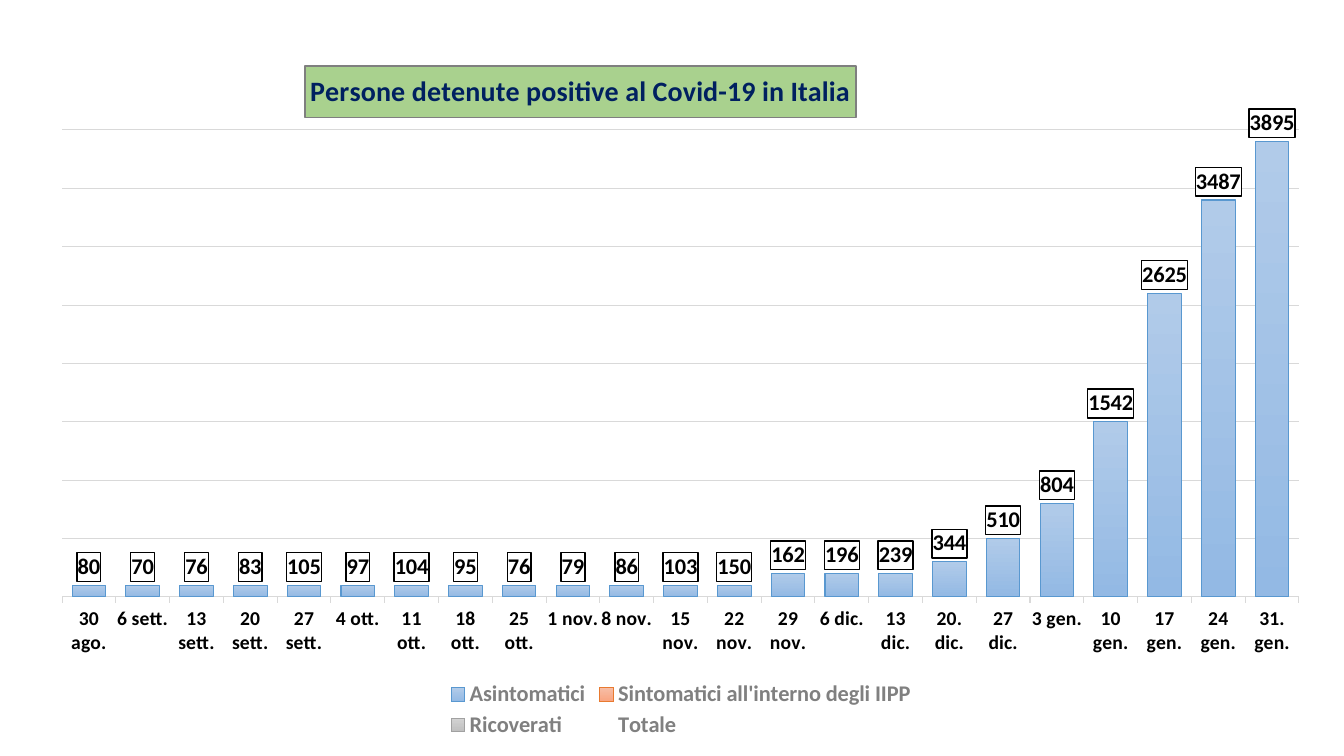
from pptx import Presentation
from pptx.chart.data import CategoryChartData
from pptx.dml.color import RGBColor
from pptx.enum.chart import XL_CHART_TYPE, XL_LABEL_POSITION, XL_LEGEND_POSITION, XL_TICK_LABEL_POSITION, XL_TICK_MARK
from pptx.oxml import parse_xml
from pptx.oxml.ns import nsdecls
from pptx.util import Emu, Pt

SCALE = 914400 / 100.8
COLOURS = {
    "text": "000000", "title": "002060", "title_fill": "A9D18E", "title_line": "7F7F7F",
    "grid": "D9D9D9", "legend": "808080", "label_fill": "FFFFFF",
}
SERIES_COLOURS = {
    "Asintomatici": ("B1CBE9", "93B9E4", "5998D0"),
    "Sintomatici all'interno degli IIPP": ("F7BDA5", "F8A582", "E87A30"),
    "Ricoverati": ("D2D2D2", "C0C0C0", "A1A1A1"),
}
WEEKS = [
    "30 ago.", "6 sett.", "13 sett.", "20 sett.", "27 sett.", "4 ott.", "11 ott.", "18 ott.",
    "25 ott.", "1 nov.", "8 nov.", "15 nov.", "22 nov.", "29 nov.", "6 dic.", "13 dic.",
    "20. dic.", "27 dic.", "3 gen.", "10 gen.", "17 gen.", "24 gen.", "31. gen.",
]
TOTALS = [
    80, 70, 76, 83, 105, 97, 104, 95, 76, 79, 86, 103, 150, 162, 196, 239, 344, 510, 804,
    1542, 2625, 3487, 3895,
]
ASYMPTOMATIC = [100] * 13 + [200] * 3 + [300, 500, 800, 1500, 2600, 3400, 3900]
SYMPTOMATIC = [0] * len(WEEKS)
HOSPITALISED = [0] * len(WEEKS)


def px(length):
    return Emu(round(length * SCALE))


def colour(name):
    return RGBColor.from_string(COLOURS.get(name, name))


def set_format(target, values):
    for name, value in values.items():
        setattr(target, name, value)


def style_font(font, size, name):
    set_format(font, {"name": "Calibri", "size": Pt(size), "bold": True})
    font.color.rgb = colour(name)


def style_line(line, name, width=0.75):
    line.color.rgb = colour(name)
    line.width = Pt(width)


def place_part(part, index, box, area):
    for layout in part.xpath("./c:layout"):
        part.remove(layout)
    fractions = {
        "x": (area[0] - box[0]) / box[2], "y": (area[1] - box[1]) / box[3],
    }
    if len(area) == 4:
        fractions.update(w=area[2] / box[2], h=area[3] / box[3])
    inner = '<c:layoutTarget val="inner"/>' if index == 0 else ""
    modes = '<c:xMode val="edge"/><c:yMode val="edge"/>'
    places = "".join(f'<c:{key} val="{value:.4f}"/>' for key, value in fractions.items())
    part.insert(index, parse_xml(
        f'<c:layout {nsdecls("c")}><c:manualLayout>{inner}{modes}{places}'
        '</c:manualLayout></c:layout>'))


def add_title(chart, box):
    chart.has_title = True
    title = chart.chart_title
    title.include_in_layout = False
    para = title.text_frame.paragraphs[0]
    span = para.add_run()
    span.text = "Persone detenute positive al Covid-19 in Italia"
    style_font(span.font, 20, "title")
    title.format.fill.solid()
    title.format.fill.fore_color.rgb = colour("title_fill")
    style_line(title.format.line, "title_line", 1)
    place_part(chart.element.xpath("./c:chart/c:title")[0], 1, box, (305, 66))


def add_legend(chart, box):
    chart.has_legend = True
    legend = chart.legend
    set_format(legend, {"position": XL_LEGEND_POSITION.BOTTOM, "include_in_layout": False})
    style_font(legend.font, 16, "legend")
    place_part(chart.element.xpath("./c:chart/c:legend")[0], 1, box, (444, 678, 474, 64))


def style_axes(chart):
    weeks = chart.category_axis
    set_format(weeks, {"major_tick_mark": XL_TICK_MARK.OUTSIDE,
                       "tick_label_position": XL_TICK_LABEL_POSITION.LOW})
    style_font(weeks.tick_labels.font, 14, "text")
    style_line(weeks.format.line, "grid")
    people = chart.value_axis
    set_format(people, {"minimum_scale": 0, "maximum_scale": 4000, "major_unit": 500,
                        "has_major_gridlines": True, "visible": False})
    style_line(people.major_gridlines.format.line, "grid")


def style_bars(series, start, end, outline):
    fill = series.format.fill
    fill.gradient()
    fill.gradient_angle = 270
    for stop, shade in zip(fill.gradient_stops, (start, end)):
        stop.color.rgb = colour(shade)
    style_line(series.format.line, outline)


def label_totals(series):
    series.format.fill.background()
    series.format.line.fill.background()
    labels = series.data_labels
    set_format(labels, {"show_value": True, "position": XL_LABEL_POSITION.INSIDE_BASE})
    style_font(labels.font, 16, "text")
    frame = parse_xml(
        f'<c:spPr {nsdecls("c", "a")}><a:solidFill><a:srgbClr val="{COLOURS["label_fill"]}"/>'
        f'</a:solidFill><a:ln w="12700"><a:solidFill><a:srgbClr val="{COLOURS["text"]}"/>'
        '</a:solidFill></a:ln></c:spPr>')
    series._element.xpath("./c:dLbls/c:txPr")[0].addprevious(frame)


def add_cases_chart(page, box):
    data = CategoryChartData()
    data.categories = WEEKS
    for name, values in zip(SERIES_COLOURS, (ASYMPTOMATIC, SYMPTOMATIC, HOSPITALISED)):
        data.add_series(name, values)
    data.add_series("Totale", TOTALS)
    chart = page.shapes.add_chart(
        XL_CHART_TYPE.COLUMN_STACKED, *map(px, box), data).chart
    style_font(chart.font, 16, "text")
    plot = chart.plots[0]
    set_format(plot, {"gap_width": 60, "overlap": 100, "vary_by_categories": False})
    for series in plot.series:
        if series.name in SERIES_COLOURS:
            style_bars(series, *SERIES_COLOURS[series.name])
        else:
            label_totals(series)
    style_axes(chart)
    add_title(chart, box)
    add_legend(chart, box)
    place_part(chart.element.xpath("./c:chart/c:plotArea")[0], 0, box, (62, 130, 1237, 467))


def main():
    deck = Presentation()
    set_format(deck, {"slide_width": px(1344), "slide_height": px(756)})
    page = deck.slides.add_slide(deck.slide_layouts[6])
    add_cases_chart(page, (36, 47, 1288, 697))
    deck.save("out.pptx")


if __name__ == "__main__":
    main()
